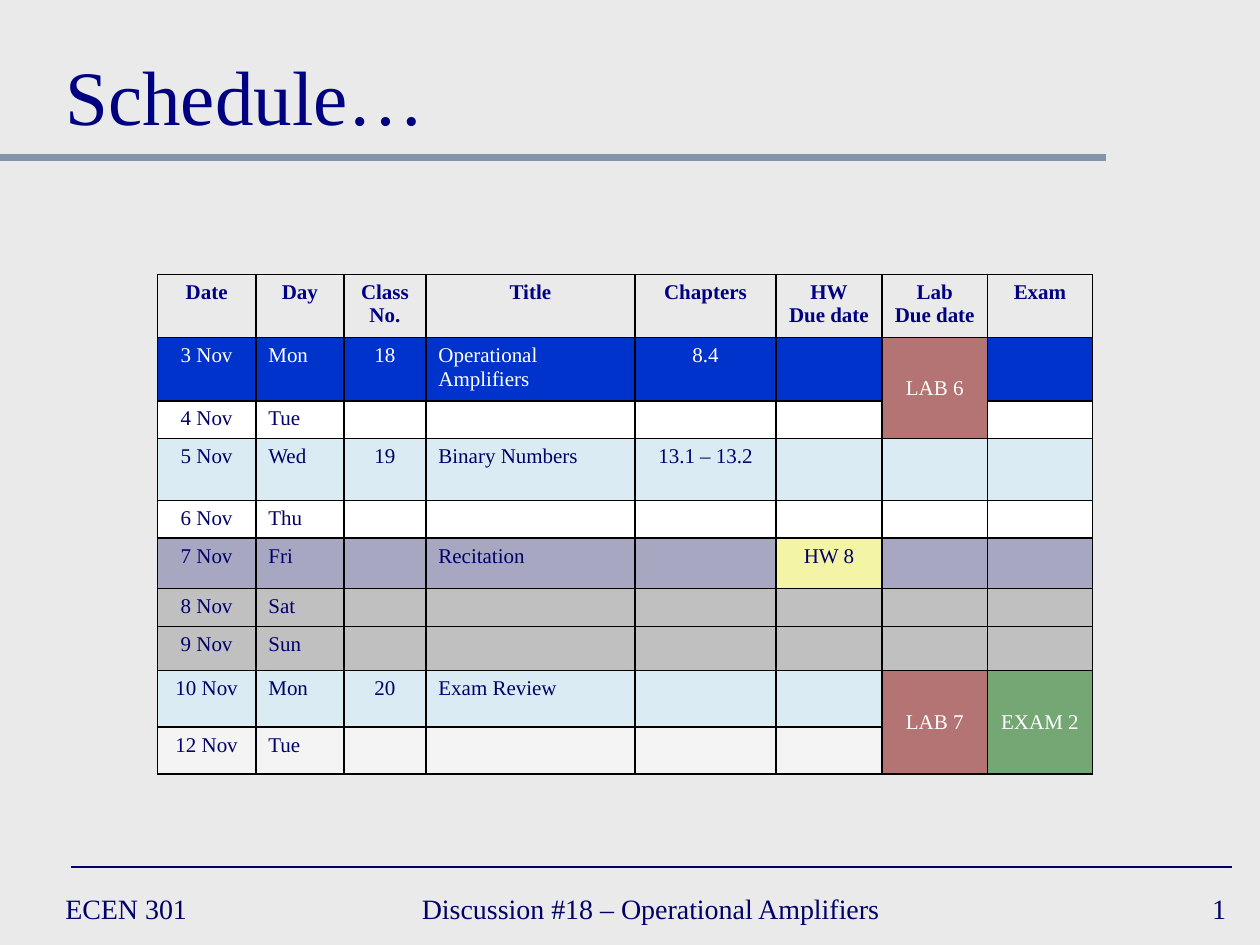
from pptx import Presentation
from pptx.dml.color import RGBColor as Rgb
from pptx.enum.text import MSO_ANCHOR as Anchor, MSO_AUTO_SIZE as Fit, PP_ALIGN as Align
from pptx.oxml.ns import qn
from pptx.util import Inches, Pt
from lxml.etree import SubElement as Sub


class Theme:
    face = "Times New Roman"
    back, bar, edge = "EAEAEA", "8495A9", "000000"
    head, ink, pale = "000080", "000066", "FFFFFF"
    title, foot, cell = 44, 16, 12
    fills = {
        "today": ("0033CC", 100),
        "free": ("FFFFFF", 100),
        "class": ("CCECFF", 50),
        "recite": ("666699", 50),
        "rest": ("C0C0C0", 100),
        "soft": ("FFFFFF", 50),
        "lab": ("800000", 50),
        "hw": ("FFFF66", 50),
        "exam": ("006600", 50),
    }


def style(frame, size, color, align=Align.LEFT, bold=False):
    for para in frame.paragraphs:
        para.alignment = align
        for run in para.runs:
            font = run.font
            font.name, font.size, font.bold = Theme.face, Pt(size), bold
            font.color.rgb = Rgb.from_string(color)
        if not para.runs:
            Sub(para._p, qn("a:endParaRPr"), sz=str(size * 100))


def paint(cell, kind):
    props = cell._tc.get_or_add_tcPr()
    for side in ("lnL", "lnR", "lnT", "lnB"):
        line = Sub(props, qn("a:" + side), w=str(Pt(1)))
        Sub(Sub(line, qn("a:solidFill")), qn("a:srgbClr"), val=Theme.edge)
    if kind is None:
        cell.fill.background()
        return
    color, alpha = Theme.fills[kind]
    cell.fill.solid()
    cell.fill.fore_color.rgb = Rgb.from_string(color)
    if alpha < 100:
        tint = props.find(qn("a:solidFill")).find(qn("a:srgbClr"))
        Sub(tint, qn("a:alpha"), val=str(alpha * 1000))


deck = Presentation()
deck.slide_width, deck.slide_height = Inches(10), Inches(7.5)
slide = deck.slides.add_slide(deck.slide_layouts[5])
slide.background.fill.solid()
slide.background.fill.fore_color.rgb = Rgb.from_string(Theme.back)

for left, right, top, color, width in [
    (0, 8.78, 1.25, Theme.bar, 4),
    (0.56, 9.78, 6.88, Theme.ink, 1),
]:
    rule = slide.shapes.add_connector(1, Inches(left), Inches(top), Inches(right), Inches(top))
    rule.line.color.rgb = Rgb.from_string(color)
    rule.line.width = Pt(width)
    Sub(rule._element.spPr, qn("a:effectLst"))

title = slide.shapes.title
title.left, title.top = Inches(0.42), Inches(0.17)
title.width, title.height = Inches(9.25), Inches(1)
frame = title.text_frame
frame.text = "Schedule…"
frame.auto_size = Fit.NONE
frame.vertical_anchor = Anchor.BOTTOM
style(frame, Theme.title, Theme.head)

for text, left, width, align, wrap in [
    ("ECEN 301", 0.42, 2.17, Align.LEFT, True),
    ("Discussion #18 – Operational Amplifiers", 3.25, 3.83, Align.LEFT, False),
    ("1", 7.75, 2.08, Align.RIGHT, True),
]:
    box = slide.shapes.add_textbox(Inches(left), Inches(7), Inches(width), Inches(0.42))
    frame = box.text_frame
    frame.text = text
    frame.word_wrap = wrap
    frame.vertical_anchor = Anchor.MIDDLE
    style(frame, Theme.foot, Theme.ink, align)

cols = [0.78, 0.7, 0.65, 1.66, 1.12, 0.84, 0.84, 0.83]
heads = ["Date", "Day", "Class\nNo.", "Title", "Chapters", "HW\nDue date", "Lab\nDue date", "Exam"]
rows = [
    (0.49, None, heads),
    (0.49, "today", ["3 Nov", "Mon", "18", "Operational Amplifiers", "8.4"]),
    (0.25, "free", ["4 Nov", "Tue"]),
    (0.49, "class", ["5 Nov", "Wed", "19", "Binary Numbers", "13.1 – 13.2"]),
    (0.3, "free", ["6 Nov", "Thu"]),
    (0.4, "recite", ["7 Nov", "Fri", "", "Recitation"]),
    (0.3, "rest", ["8 Nov", "Sat"]),
    (0.35, "rest", ["9 Nov", "Sun"]),
    (0.45, "class", ["10 Nov", "Mon", "20", "Exam Review"]),
    (0.37, "soft", ["12 Nov", "Tue"]),
]
due = {
    (1, 6): ("LAB 6", "lab", 2),
    (5, 5): ("HW 8", "hw", 1),
    (8, 6): ("LAB 7", "lab", 2),
    (8, 7): ("EXAM 2", "exam", 2),
}
high = sum(row[0] for row in rows)
grid = slide.shapes.add_table(
    len(rows), len(cols), Inches(1.25), Inches(2.18), Inches(sum(cols)), Inches(high)
).table
grid.first_row = grid.horz_banding = False
for col, width in zip(grid.columns, cols):
    col.width = Inches(width)

for r, (height, kind, words) in enumerate(rows):
    grid.rows[r].height = Inches(height)
    for c in range(len(cols)):
        cell = grid.cell(r, c)
        word = words[c] if c < len(words) else ""
        text, fill, span = due.get((r, c), (word, kind, 1))
        cell.text = text
        if span > 1:
            cell.merge(grid.cell(r + span - 1, c))
            cell.vertical_anchor = Anchor.MIDDLE
        paint(cell, fill)
        color = Theme.head if r == 0 else Theme.ink
        if fill in ("today", "lab", "exam"):
            color = Theme.pale
        align = Align.LEFT if r and c in (1, 3) else Align.CENTER
        style(cell.text_frame, Theme.cell, color, align, r == 0)

deck.save("out.pptx")
